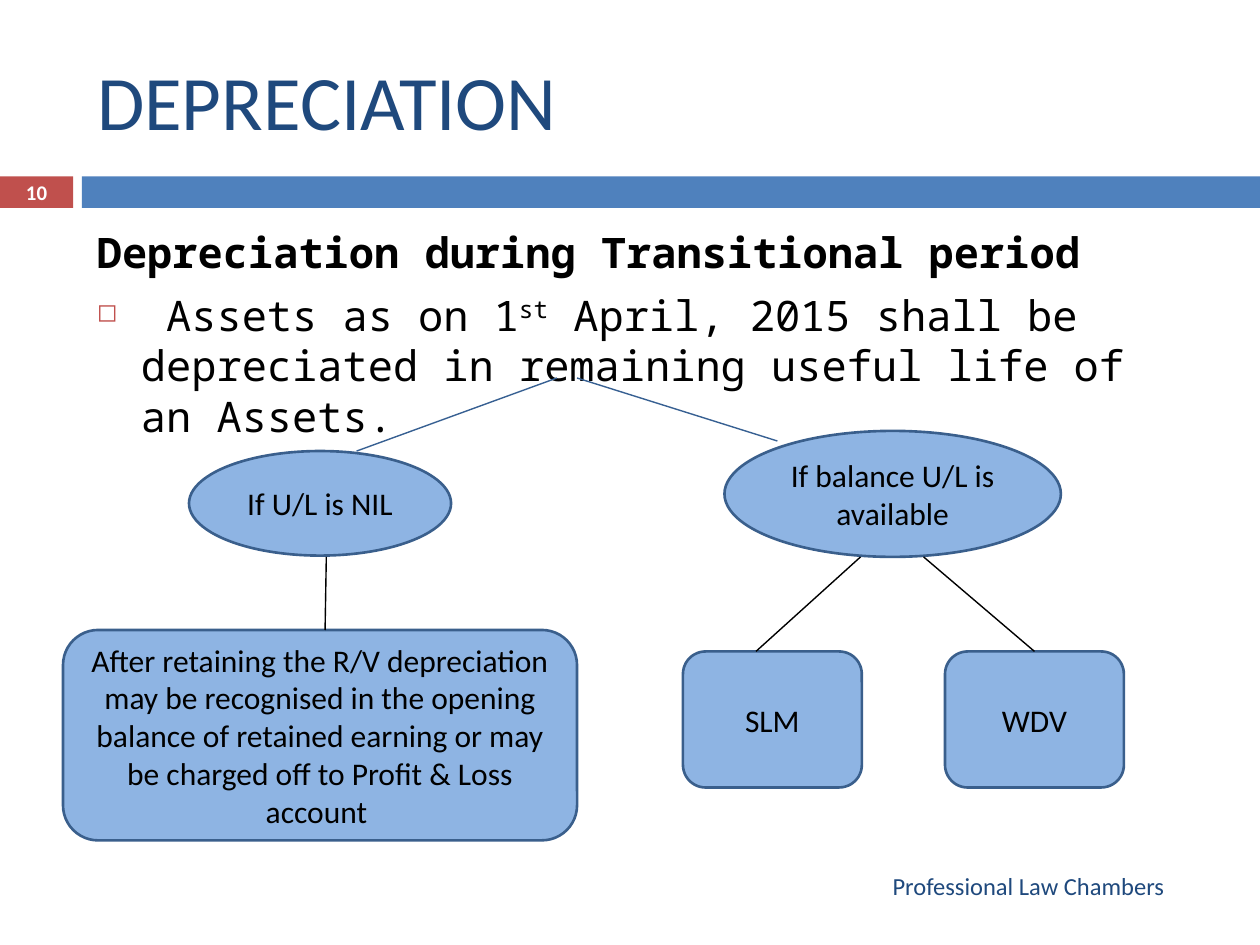
from pptx import Presentation
from pptx.dml.color import RGBColor
from pptx.enum.shapes import MSO_CONNECTOR, MSO_SHAPE
from pptx.enum.text import MSO_ANCHOR, PP_ALIGN
from pptx.oxml import parse_xml
from pptx.oxml.ns import nsdecls
from pptx.util import Inches, Pt

RECTANGLE, ELLIPSE = MSO_SHAPE.RECTANGLE, MSO_SHAPE.OVAL
ROUNDED = MSO_SHAPE.ROUNDED_RECTANGLE
STRAIGHT = MSO_CONNECTOR.STRAIGHT
LEFT, CENTER, RIGHT = PP_ALIGN.LEFT, PP_ALIGN.CENTER, PP_ALIGN.RIGHT
TOP, MIDDLE = MSO_ANCHOR.TOP, MSO_ANCHOR.MIDDLE
TOP_SIDE = 0

TITLE_FONT, BODY_FONT = "Calibri", "Noto Sans Mono"
COLORS = {
    "navy": "1F497D", "blue": "4F81BD", "red": "C0504D",
    "node": "8EB4E3", "outline": "3A5F8C", "branch": "376092",
    "black": "000000", "white": "FFFFFF",
}


def color(name):
    return RGBColor.from_string(COLORS[name])


def format_run(run, size, color_name, font=TITLE_FONT, bold=False):
    run.font.name = font
    run.font.size = Pt(size)
    run.font.bold = bold
    run.font.color.rgb = color(color_name)


def write_text(shape, text, size, color_name, align, bold=False):
    frame = shape.text_frame
    frame.word_wrap = True
    frame.vertical_anchor = MIDDLE
    frame.text = text
    paragraph = frame.paragraphs[0]
    paragraph.alignment = align
    format_run(paragraph.runs[0], size, color_name, bold=bold)


def add_shape(slide, kind, box, fill, line=None):
    shape = slide.shapes.add_shape(kind, *map(Inches, box))
    shape.shadow.inherit = False
    shape.fill.solid()
    shape.fill.fore_color.rgb = color(fill)
    if line:
        shape.line.color.rgb = color(line)
        shape.line.width = Pt(1.5)
    else:
        shape.line.fill.background()
    return shape


def add_label(slide, box, *text_format, **options):
    write_text(slide.shapes.add_textbox(*map(Inches, box)), *text_format, **options)


def add_node(slide, kind, box, text):
    node = add_shape(slide, kind, box, "node", "outline")
    write_text(node, text, 18, "black", CENTER)
    return node


def add_line(slide, start, end, color_name):
    line = slide.shapes.add_connector(STRAIGHT, *map(Inches, start + end))
    line.line.color.rgb = color(color_name)
    line.line.width = Pt(0.79)
    line._element.spPr.append(parse_xml(f"<a:effectLst {nsdecls('a')}/>"))
    return line


def add_header(slide, box):
    """Title above a band that holds the slide number."""
    left, top, width, height = box
    band_height, number_width, gap = 0.25, 0.58, 0.07
    band_top = top + height - band_height
    bar_left = left + number_width + gap
    add_shape(slide, RECTANGLE, (left, band_top, number_width, band_height), "red")
    add_shape(slide, RECTANGLE,
              (bar_left, band_top, width - number_width - gap, band_height), "blue")
    add_label(slide, (left, band_top - 0.01, number_width, band_height + 0.02),
              "10", 11.9, "white", CENTER, bold=True)

    title = slide.shapes.title
    title.left, title.top = Inches(left + 0.67), Inches(top + 0.25)
    title.width, title.height = Inches(8.92), Inches(1.08)
    write_text(title, "DEPRECIATION", 44, "navy", LEFT)


def add_body(slide, box):
    """Bold heading and one bulleted statement."""
    frame = slide.shapes.add_textbox(*map(Inches, box)).text_frame
    frame.word_wrap = True
    frame.vertical_anchor = TOP
    heading, statement = frame.paragraphs[0], frame.add_paragraph()
    heading.text = "Depreciation during Transitional period"
    for text in (" Assets as on 1", "st",
                 " April, 2015 shall be depreciated in remaining useful life of an Assets."):
        statement.add_run().text = text

    for paragraph in (heading, statement):
        paragraph.space_before = Pt(7)
        properties = paragraph._p.get_or_add_pPr()
        properties.set("marL", str(Inches(0.35)))
        properties.set("indent", str(Inches(-0.35)))
        for run in paragraph.runs:
            format_run(run, 24, "black", BODY_FONT, bold=paragraph is heading)
    statement.runs[1].font._element.set("baseline", "30000")

    properties = statement._p.get_or_add_pPr()
    for bullet in (f'<a:buClr {nsdecls("a")}><a:srgbClr val="{COLORS["red"]}"/></a:buClr>',
                   f'<a:buSzPct {nsdecls("a")} val="60000"/>',
                   f'<a:buChar {nsdecls("a")} char="◻"/>'):
        properties.append(parse_xml(bullet))


def add_decision_tree(slide, box):
    """Two cases below the statement, each with its treatment."""
    left, top, _, _ = box

    def at(x, y):
        return left + x, top + y

    # Cases
    add_node(slide, ELLIPSE, at(1, 0.58) + (2.08, 0.83), "If U/L is NIL")
    add_node(slide, ELLIPSE, at(5.25, 0.42) + (2.67, 1), "If balance U/L is available")

    # Treatments
    add_node(slide, ROUNDED, at(0, 2) + (4.08, 1.67),
             "After retaining the R/V depreciation may be recognised in the opening "
             "balance of retained earning or may be charged off to Profit & Loss account ")
    method_size = (1.42, 1.08)
    add_node(slide, ROUNDED, at(4.92, 2.17) + method_size, "SLM")
    wdv = add_node(slide, ROUNDED, at(7, 2.17) + method_size, "WDV")

    # Branches
    add_line(slide, at(3.92, 0), at(2.33, 0.58), "branch")
    add_line(slide, at(4.08, 0), at(5.67, 0.5), "branch")
    add_line(slide, at(2.09, 1.42), at(2.08, 2), "black")
    add_line(slide, at(6.33, 1.42), at(5.5, 2.17), "black")
    wdv_line = add_line(slide, at(6.83, 1.42), at(7.71, 2.17), "black")
    wdv_line.end_connect(wdv, TOP_SIDE)


def main():
    presentation = Presentation()
    presentation.slide_width, presentation.slide_height = Inches(10), Inches(7.5)
    title_only = presentation.slide_layouts[5]
    slide = presentation.slides.add_slide(title_only)
    add_header(slide, (0, 0, 10, 1.65))
    add_body(slide, (0.67, 1.75, 8.92, 4.92))
    add_decision_tree(slide, (0.5, 3, 8.42, 3.67))
    add_label(slide, (0.67, 6.83, 8.67, 0.4),
              "Professional Law Chambers", 14, "navy", RIGHT)
    presentation.save("out.pptx")


if __name__ == "__main__":
    main()
